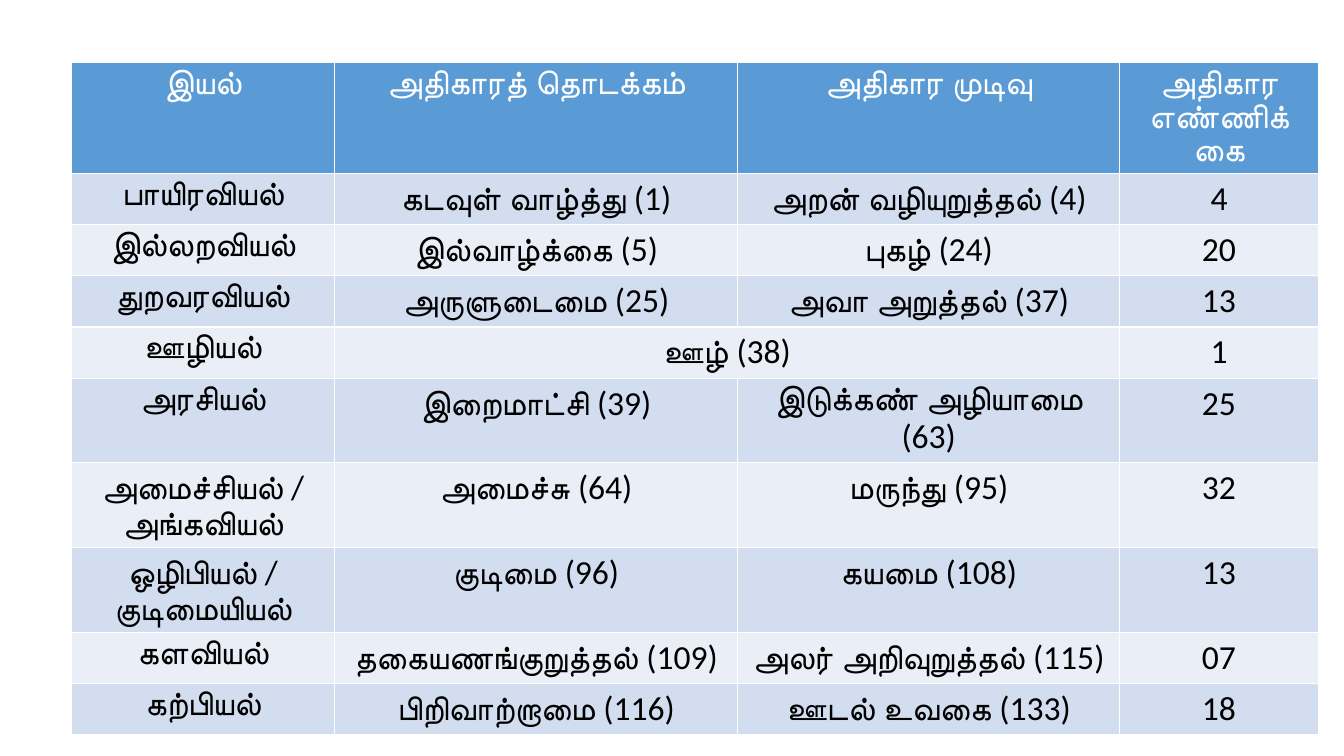
from pptx import Presentation
from pptx.dml.color import RGBColor as Rgb
from pptx.enum.text import PP_ALIGN as Align
from pptx.util import Cm, Pt

HEAD = ("இயல்", "அதிகாரத் தொடக்கம்", "அதிகார முடிவு", "அதிகார எண்ணிக்கை")
# None marks a cell joined to the one on its left
BODY = [
    ("பாயிரவியல்", "கடவுள் வாழ்த்து (1)", "அறன் வழியுறுத்தல் (4)", "4"),
    ("இல்லறவியல்", "இல்வாழ்க்கை (5)", "புகழ் (24)", "20"),
    ("துறவரவியல்", "அருளுடைமை (25)", "அவா அறுத்தல் (37)", "13"),
    ("ஊழியல்", "ஊழ் (38)", None, "1"),
    ("அரசியல்", "இறைமாட்சி (39)", "இடுக்கண் அழியாமை (63)", "25"),
    ("அமைச்சியல் / அங்கவியல்", "அமைச்சு (64)", "மருந்து (95)", "32"),
    ("ஒழிபியல் / குடிமையியல்", "குடிமை (96)", "கயமை (108)", "13"),
    ("களவியல்", "தகையணங்குறுத்தல் (109)", "அலர் அறிவுறுத்தல் (115)", "07"),
    ("கற்பியல்", "பிறிவாற்றாமை (116)", "ஊடல் உவகை (133)", "18"),
]
COLORS = {"head": "5B9BD5", "odd": "D2DEEF", "even": "EAEFF7",
          "light": "FFFFFF", "dark": "000000"}
WIDTHS = (6.63, 10.16, 9.63, 5)
ROW = 1.04
LEFT, TOP, HEIGHT = 1.8, 1.58, 15.75


def color(name):
    return Rgb.from_string(COLORS[name])


def write(cell, text, ink="dark", fill="odd", size=24, face="Calibri"):
    cell.fill.solid()
    cell.fill.fore_color.rgb = color(fill)
    par = cell.text_frame.paragraphs[0]
    par.alignment = Align.CENTER
    run = par.add_run()
    run.text = text
    run.font.name = face
    run.font.size = Pt(size)
    run.font.color.rgb = color(ink)


def main():
    prs = Presentation()
    prs.slide_width, prs.slide_height = Cm(33.87), Cm(19.05)
    slide = prs.slides.add_slide(prs.slide_layouts[6])

    rows = [HEAD] + BODY
    frame = slide.shapes.add_table(len(rows), len(HEAD), Cm(LEFT), Cm(TOP),
                                   Cm(sum(WIDTHS)), Cm(HEIGHT))
    table = frame.table
    for col, width in zip(table.columns, WIDTHS):
        col.width = Cm(width)
    for row in table.rows:
        row.height = Cm(ROW)
    frame.height = Cm(HEIGHT)

    for r, row in enumerate(rows):
        ink = "dark" if r else "light"
        fill = ("even", "odd")[r % 2] if r else "head"
        for c, text in enumerate(row):
            if text is None:
                table.cell(r, c - 1).merge(table.cell(r, c))
            else:
                write(table.cell(r, c), text, ink=ink, fill=fill)

    prs.save("out.pptx")


if __name__ == "__main__":
    main()
